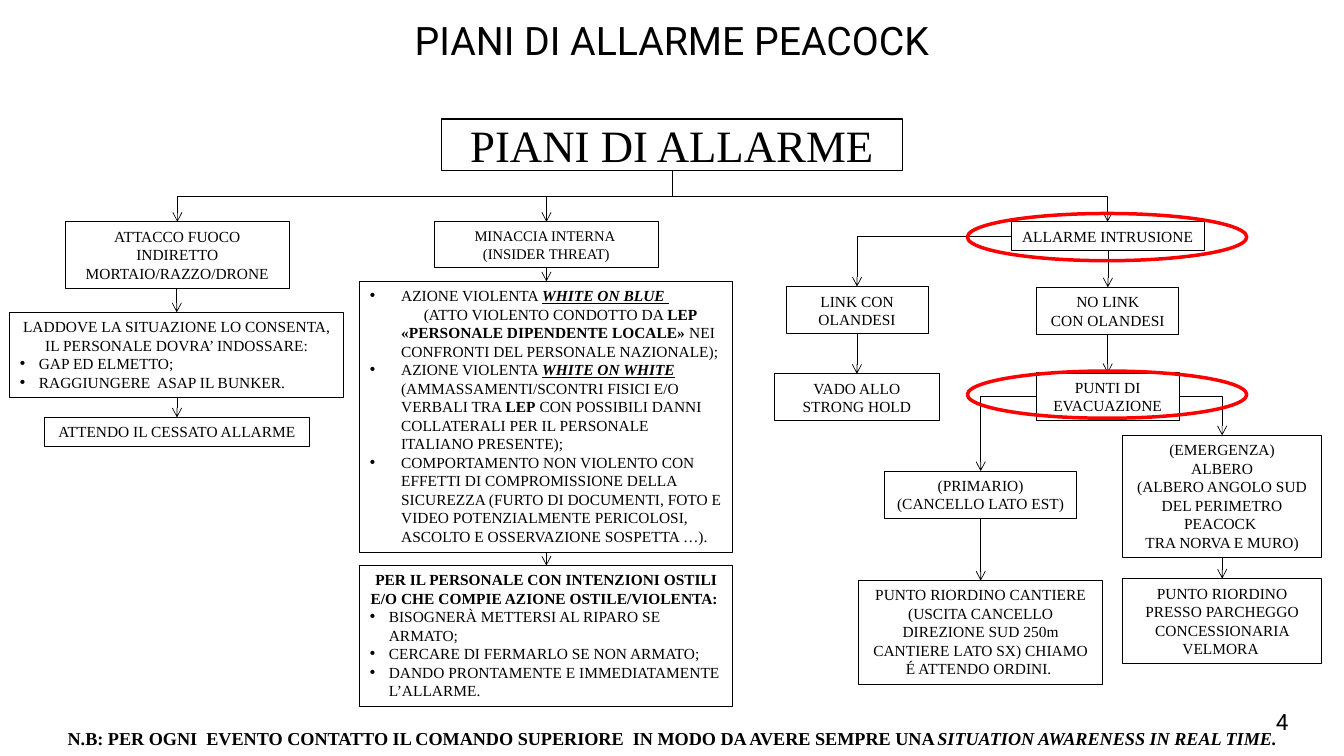
"""Build the alarm plan flowchart slide."""
from lxml import etree
from pptx import Presentation
from pptx import util as u
from pptx.dml.color import RGBColor
from pptx.enum import shapes, text
from pptx.oxml.ns import qn

BLACK = RGBColor(0x00, 0x00, 0x00)
WHITE = RGBColor(0xFF, 0xFF, 0xFF)
RED = RGBColor(0xFF, 0x00, 0x00)
SERIF, SANS = "Times New Roman", "Roboto"
BREAK = "\n"

BOXES = {
    "piani": ((11.13, 3, 11.61, 1.3), ["PIANI DI ALLARME"]),
    "attacco": ((1.65, 5.59, 5.64, 1.67), ["ATTACCO FUOCO INDIRETTO MORTAIO/RAZZO/DRONE"]),
    "laddove": ((0.25, 7.87, 8.41, 2.14),
                ["LADDOVE LA SITUAZIONE LO CONSENTA,", "IL PERSONALE DOVRA’ INDOSSARE:"]),
    "attendo": ((1.12, 10.52, 6.68, 0.73), ["ATTENDO IL CESSATO ALLARME"]),
    "minaccia": ((10.95, 5.59, 5.64, 1.16), ["MINACCIA INTERNA ", "(INSIDER THREAT)"]),
    "azione": ((9.07, 7.09, 9.4, 6.83), []),
    "ostili": ((9.07, 14.25, 9.4, 3.55),
               [[("PER IL PERSONALE CON INTENZIONI OSTILI E/O CHE COMPIE "
                  "AZIONE OSTILE/VIOLENTA: ", "b")]]),
    "intrusione": ((25.48, 5.59, 4.87, 0.73), ["ALLARME INTRUSIONE"]),
    "primario": ((22.3, 11.87, 4.83, 1.19), ["(PRIMARIO)", "(CANCELLO LATO EST)"]),
    "cantiere": ((21.64, 14.63, 6.15, 2.62),
                 ["PUNTO RIORDINO CANTIERE",
                  "(USCITA CANCELLO DIREZIONE SUD 250m CANTIERE LATO SX) CHIAMO É ATTENDO ORDINI. "]),
    "emergenza": ((28.3, 10.97, 5, 3.07),
                  ["(EMERGENZA)", "ALBERO", "(ALBERO ANGOLO SUD DEL PERIMETRO PEACOCK ",
                   "TRA NORVA E MURO)"]),
    "parcheggio": ((28.3, 14.58, 5, 2.14),
                   ["PUNTO RIORDINO PRESSO PARCHEGGO CONCESSIONARIA VELMORA "]),
    "punti": ((26.11, 9.4, 3.61, 1.19), ["PUNTI DI EVACUAZIONE"]),
    "link": ((19.81, 7.22, 3.58, 1.19), ["LINK CON OLANDESI"]),
    "vado": ((19.51, 9.42, 4.17, 1.19), ["VADO ALLO STRONG HOLD"]),
    "no_link": ((26.13, 7.24, 3.58, 1.19), ["NO LINK", "CON OLANDESI"]),
}
BULLETS = {
    "laddove": (0.48, ["GAP ED ELMETTO;", "RAGGIUNGERE  ASAP IL BUNKER."]),
    "azione": (0.79, [
        [("AZIONE VIOLENTA ", ""), ("WHITE ON BLUE", "biu"), (" ", "bu"), (BREAK, ""),
         ("\t(ATTO VIOLENTO CONDOTTO DA ", ""), ("LEP «PERSONALE DIPENDENTE LOCALE»", "b"),
         (" NEI CONFRONTI DEL PERSONALE NAZIONALE);", "")],
        [("AZIONE VIOLENTA ", ""), ("WHITE ON WHITE", "biu"), (" ", "bu"),
         ("(AMMASSAMENTI/SCONTRI FISICI E/O VERBALI TRA ", ""), ("LEP", "b"),
         (" CON POSSIBILI DANNI COLLATERALI PER IL PERSONALE ITALIANO PRESENTE);", "")],
        "COMPORTAMENTO NON VIOLENTO CON EFFETTI DI COMPROMISSIONE DELLA SICUREZZA "
        "(FURTO DI DOCUMENTI, FOTO E VIDEO POTENZIALMENTE PERICOLOSI, ASCOLTO E "
        "OSSERVAZIONE SOSPETTA …)."]),
    "ostili": (0.48, ["BISOGNERÀ METTERSI AL RIPARO SE ARMATO;",
                      "CERCARE DI FERMARLO SE NON ARMATO;",
                      "DANDO PRONTAMENTE E IMMEDIATAMENTE L’ALLARME."]),
}
TABS = {"azione": 1.36}
SIZES = {"piani": 32, "minaccia": 10.5}
MIDDLE = {"piani", "parcheggio", "link", "vado", "no_link"}
UNWRAPPED = {"laddove", "attendo", "intrusione", "primario"}
TREE = [("piani", "attacco"), ("piani", "minaccia"), ("piani", "intrusione")]
CORNERS = [("intrusione", "link"), ("punti", "primario"), ("punti", "emergenza")]
STRAIGHT = [("attacco", "laddove"), ("laddove", "attendo"), ("minaccia", "azione"),
            ("azione", "ostili"), ("intrusione", "no_link"), ("no_link", "punti"),
            ("link", "vado"), ("primario", "cantiere"), ("emergenza", "parcheggio")]
RINGS = [(24.38, 9.35, 7.04, 1.19), (24.38, 5.38, 7.04, 1.19)]
LABELS = [
    ((8, 0, 17.86, 2.01), "PIANI DI ALLARME PEACOCK", SANS, 28, True),
    ((31.32, 17.73, 1.98, 1.02), "4", SANS, 16, False),
    ((0, 18.19, 33.87, 0.81),
     [("N.B: PER OGNI  EVENTO CONTATTO IL COMANDO SUPERIORE  IN MODO DA AVERE SEMPRE UNA ", "b"),
      ("SITUATION AWARENESS IN REAL TIME.", "bi")], SERIF, 13, False),
]


def cm(values):
    return [u.Cm(v) for v in values]


def fill_paragraph(p, runs, font, size):
    for words, style in [(runs, "")] if isinstance(runs, str) else runs:
        if words == BREAK:
            p.add_line_break()
            continue
        r = p.add_run()
        r.text = words
        look = {"name": font, "size": u.Pt(size), "bold": "b" in style,
                "italic": "i" in style, "underline": "u" in style}
        for key, value in look.items():
            setattr(r.font, key, value)
        r.font.color.rgb = BLACK


def set_bullet(p, indent, tab):
    pPr = p._p.get_or_add_pPr()
    pPr.set("marL", str(u.Cm(indent)))
    pPr.set("indent", str(-u.Cm(indent)))
    etree.SubElement(pPr, qn("a:buFont")).set("typeface", "Arial")
    etree.SubElement(pPr, qn("a:buChar")).set("char", "•")
    if tab:
        stop = etree.SubElement(etree.SubElement(pPr, qn("a:tabLst")), qn("a:tab"))
        stop.set("pos", str(u.Cm(tab)))
        stop.set("algn", "l")


def write(tf, lines, font, size, middle, wrap=True, bullets=(0, []), tab=None):
    anchors = text.MSO_ANCHOR
    frame = {"word_wrap": wrap,
             "vertical_anchor": anchors.MIDDLE if middle else anchors.TOP}
    for key, value in frame.items():
        setattr(tf, key, value)
    indent, items = bullets
    for i, runs in enumerate(lines + items):
        p = tf.add_paragraph() if i else tf.paragraphs[0]
        if i < len(lines):
            p.alignment = text.PP_ALIGN.CENTER
        else:
            p.alignment = text.PP_ALIGN.LEFT
            set_bullet(p, indent, tab)
        fill_paragraph(p, runs, font, size)


def add_outline(s, kind, rect, color, width):
    sp = s.shapes.add_shape(kind, *cm(rect))
    sp.shadow.inherit = False
    sp.fill.background()
    sp.line.color.rgb = color
    sp.line.width = u.Pt(width)
    return sp


def add_arrow(s, kind, x1, y1, x2, y2):
    c = s.shapes.add_connector(kind, *cm((x1, y1, x2, y2)))
    c.line.color.rgb = BLACK
    c.line.width = u.Pt(0.5)
    etree.SubElement(c.line._get_or_add_ln(), qn("a:tailEnd")).set("type", "arrow")
    etree.SubElement(c._element.spPr, qn("a:effectLst"))
    return c


def top(name):
    x, y, w, _ = BOXES[name][0]
    return x + w / 2, y


def bottom(name):
    x, y = top(name)
    return x, y + BOXES[name][0][3]


def add_tree_arrow(s, parent, child):
    (x1, y1), (x2, y2) = bottom(parent), top(child)
    side = 1 if x2 > x1 else -1
    cx, cy = (x1 + x2) / 2, (y1 + y2) / 2
    dx, dy = side * (y2 - y1) / 2, abs(x2 - x1) / 2
    c = add_arrow(s, shapes.MSO_CONNECTOR.ELBOW, cx + dx, cy - dy, cx - dx, cy + dy)
    c.rotation = 270 if side > 0 else 90


def add_corner_arrow(s, parent, child):
    x, y, w, h = BOXES[parent][0]
    x2, y2 = top(child)
    c = add_arrow(s, shapes.MSO_CONNECTOR.ELBOW, x + w if x2 > x else x, y + h / 2, x2, y2)
    c._element.spPr.find(qn("a:prstGeom")).set("prst", "bentConnector2")


def main():
    prs = Presentation()
    prs.slide_width, prs.slide_height = cm((33.87, 19.05))
    s = prs.slides.add_slide(prs.slide_layouts[6])
    for rect, words, font, size, middle in LABELS:
        tf = s.shapes.add_textbox(*cm(rect)).text_frame
        write(tf, [words], font, size, middle)
    for pair in TREE:
        add_tree_arrow(s, *pair)
    for pair in CORNERS:
        add_corner_arrow(s, *pair)
    for parent, child in STRAIGHT:
        x, y = top(child)
        add_arrow(s, shapes.MSO_CONNECTOR.STRAIGHT, x, bottom(parent)[1], x, y)
    for name, (rect, lines) in BOXES.items():
        root = name == "piani"
        sp = add_outline(s, shapes.MSO_SHAPE.RECTANGLE, rect, BLACK, 1 if root else 0.75)
        if root:
            sp.fill.solid()
            sp.fill.fore_color.rgb = WHITE
        else:
            sp.text_frame.auto_size = text.MSO_AUTO_SIZE.SHAPE_TO_FIT_TEXT
        write(sp.text_frame, lines, SERIF, SIZES.get(name, 11), name in MIDDLE,
              name not in UNWRAPPED, BULLETS.get(name, (0, [])), TABS.get(name))
    for rect in RINGS:
        add_outline(s, shapes.MSO_SHAPE.OVAL, rect, RED, 2.5)
    prs.save("out.pptx")


if __name__ == "__main__":
    main()
